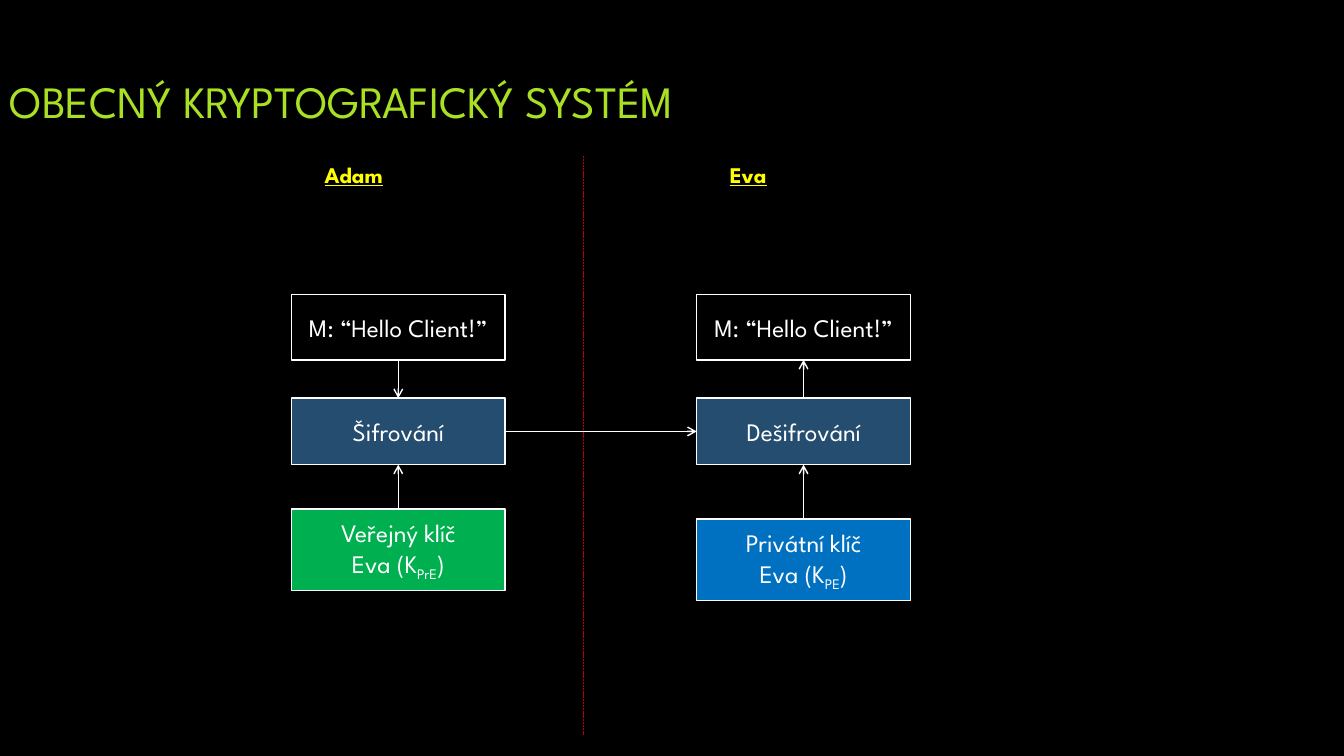
"""Build a slide showing a general cryptographic system."""
from lxml import etree
from pptx import Presentation
from pptx.dml.color import RGBColor
from pptx.enum.dml import MSO_LINE
from pptx.enum.shapes import MSO_CONNECTOR, MSO_SHAPE
from pptx.enum.text import MSO_ANCHOR, PP_ALIGN
from pptx.oxml.ns import qn
from pptx.util import Inches, Pt

RECT, LINE = MSO_SHAPE.RECTANGLE, MSO_CONNECTOR.STRAIGHT
MID, TOP = MSO_ANCHOR.MIDDLE, MSO_ANCHOR.TOP
LEFT, CENTER = PP_ALIGN.LEFT, PP_ALIGN.CENTER
DASH = MSO_LINE.SQUARE_DOT

BLACK = RGBColor(0, 0, 0)
WHITE = RGBColor(255, 255, 255)
LIME = RGBColor(0xA9, 0xE0, 0x23)
YELLOW = RGBColor(255, 255, 0)
RED = RGBColor(0xC0, 0, 0)
NAVY = RGBColor(0x25, 0x4D, 0x6F)
BLUE = RGBColor(0, 0x70, 0xC0)
GREEN = RGBColor(0, 0xB0, 0x50)
FONT = "League Spartan"

TITLE = "OBECNÝ KRYPTOGRAFICKÝ SYSTÉM"
HELLO = "M: “Hello Client!”"
SIDES = [
    dict(name="Adam", left=2.89, head=3.12, step="Šifrování",
         key="Veřejný klíč\nEva (K", sub="PrE", fill=GREEN, top=5.05),
    dict(name="Eva", left=6.91, head=7.14, step="Dešifrování",
         key="Privátní klíč\nEva (K", sub="PE", fill=BLUE, top=5.15),
]
WIDTH = 2.12
NOTE_TOP, NOTE_H = 2.92, 0.65
STEP_TOP, STEP_H = 3.95, 0.66
KEY_H = 0.81


def write(shape, text, sub="", end="", size=18, color=WHITE, bold=False,
          under=False, align=CENTER, anchor=MID):
    frame = shape.text_frame
    frame.word_wrap = True
    frame.vertical_anchor = anchor
    para = frame.paragraphs[0]
    para.alignment = align
    first, *rest = text.split("\n")
    parts = [(first, False)]
    for line in rest:
        parts += [(None, False), (line, False)]
    parts += [(sub, True), (end, False)]
    for part, low in parts:
        if part is None:
            para.add_line_break()
        elif part:
            run = para.add_run()
            run.text = part
            font = run.font
            font.name, font.size, font.bold = FONT, Pt(size), bold
            font.underline = under
            font.color.rgb = color
            if low:
                font._element.set("baseline", "-25000")


def label(slide, box, text, **form):
    write(slide.shapes.add_textbox(*map(Inches, box)), text, **form)


def block(slide, box, text, fill=None, **form):
    shape = slide.shapes.add_shape(RECT, *map(Inches, box))
    shape.shadow.inherit = False
    if fill is None:
        shape.fill.background()
    else:
        shape.fill.solid()
        shape.fill.fore_color.rgb = fill
    shape.line.color.rgb = WHITE
    shape.line.width = Pt(1)
    write(shape, text, **form)
    return shape


def rule(slide, ends, color=WHITE, width=1):
    line = slide.shapes.add_connector(LINE, *map(Inches, ends))
    line.line.color.rgb = color
    line.line.width = Pt(width)
    etree.SubElement(line._element.spPr, qn("a:effectLst"))
    return line


def arrow(slide, start, out, stop, into):
    line = rule(slide, (0, 0, 0, 0))
    line.begin_connect(start, out)
    line.end_connect(stop, into)
    etree.SubElement(line.line._get_or_add_ln(), qn("a:tailEnd"), type="arrow")


def main():
    deck = Presentation()
    deck.slide_width, deck.slide_height = Inches(13.33), Inches(7.5)
    slide = deck.slides.add_slide(deck.slide_layouts[6])
    slide.background.fill.solid()
    slide.background.fill.fore_color.rgb = BLACK

    label(slide, (0, 0.67, 13.33, 0.65), TITLE, size=32, color=LIME, align=LEFT)
    split = rule(slide, (5.79, 1.55, 5.79, 7.29), color=RED, width=0.5)
    split.line.dash_style = DASH

    steps, notes = [], []
    for side in SIDES:
        left = side["left"]
        label(slide, (side["head"], 1.55, 0.92, 0.37), side["name"], size=16,
              color=YELLOW, bold=True, under=True, align=LEFT, anchor=TOP)
        note = block(slide, (left, NOTE_TOP, WIDTH, NOTE_H), HELLO)
        step = block(slide, (left, STEP_TOP, WIDTH, STEP_H), side["step"],
                     fill=NAVY)
        key = block(slide, (left, side["top"], WIDTH, KEY_H), side["key"],
                    sub=side["sub"], end=")", fill=side["fill"])
        arrow(slide, key, 0, step, 2)
        notes.append(note)
        steps.append(step)

    arrow(slide, notes[0], 2, steps[0], 0)
    arrow(slide, steps[0], 3, steps[1], 1)
    arrow(slide, steps[1], 0, notes[1], 2)
    deck.save("out.pptx")


if __name__ == "__main__":
    main()
